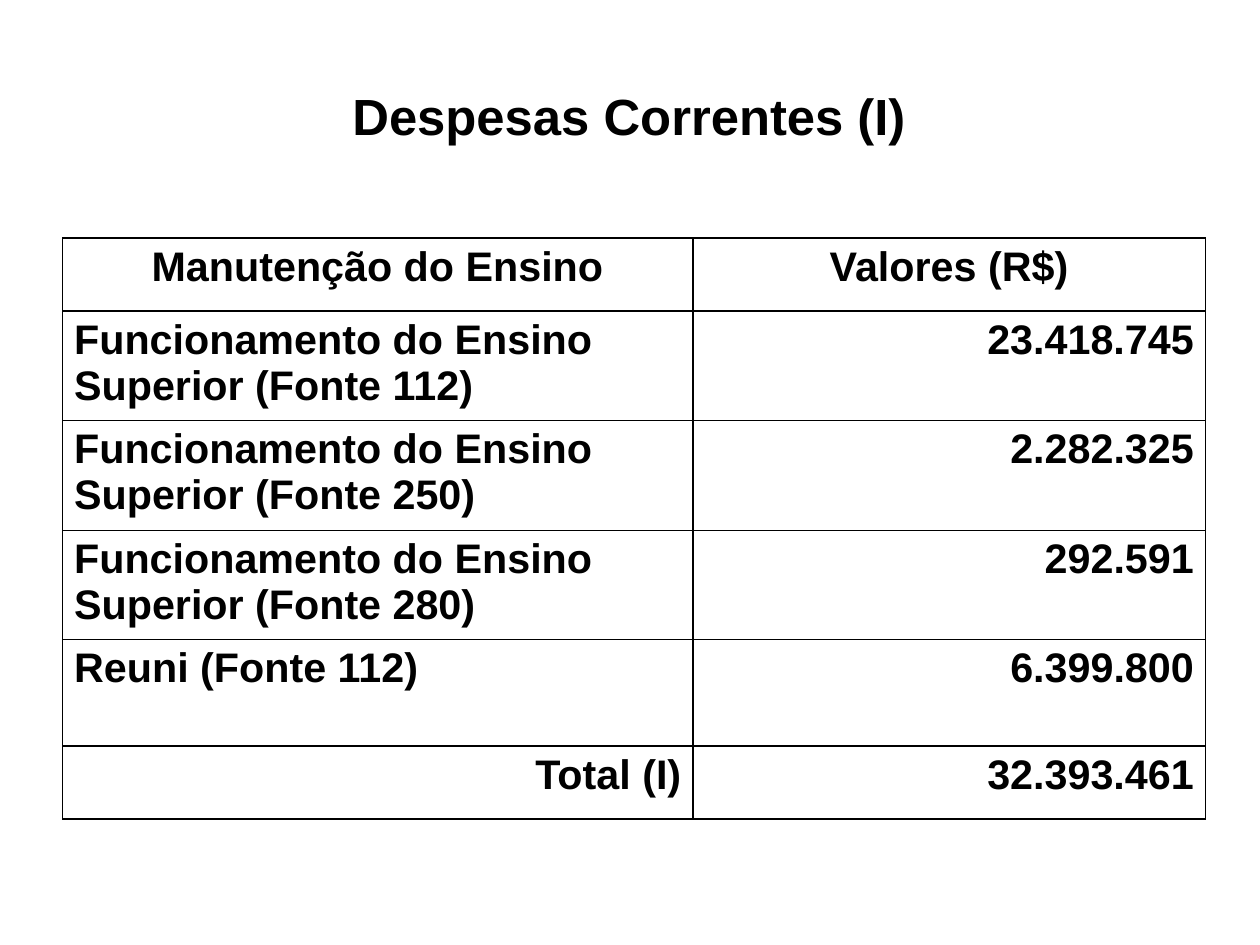
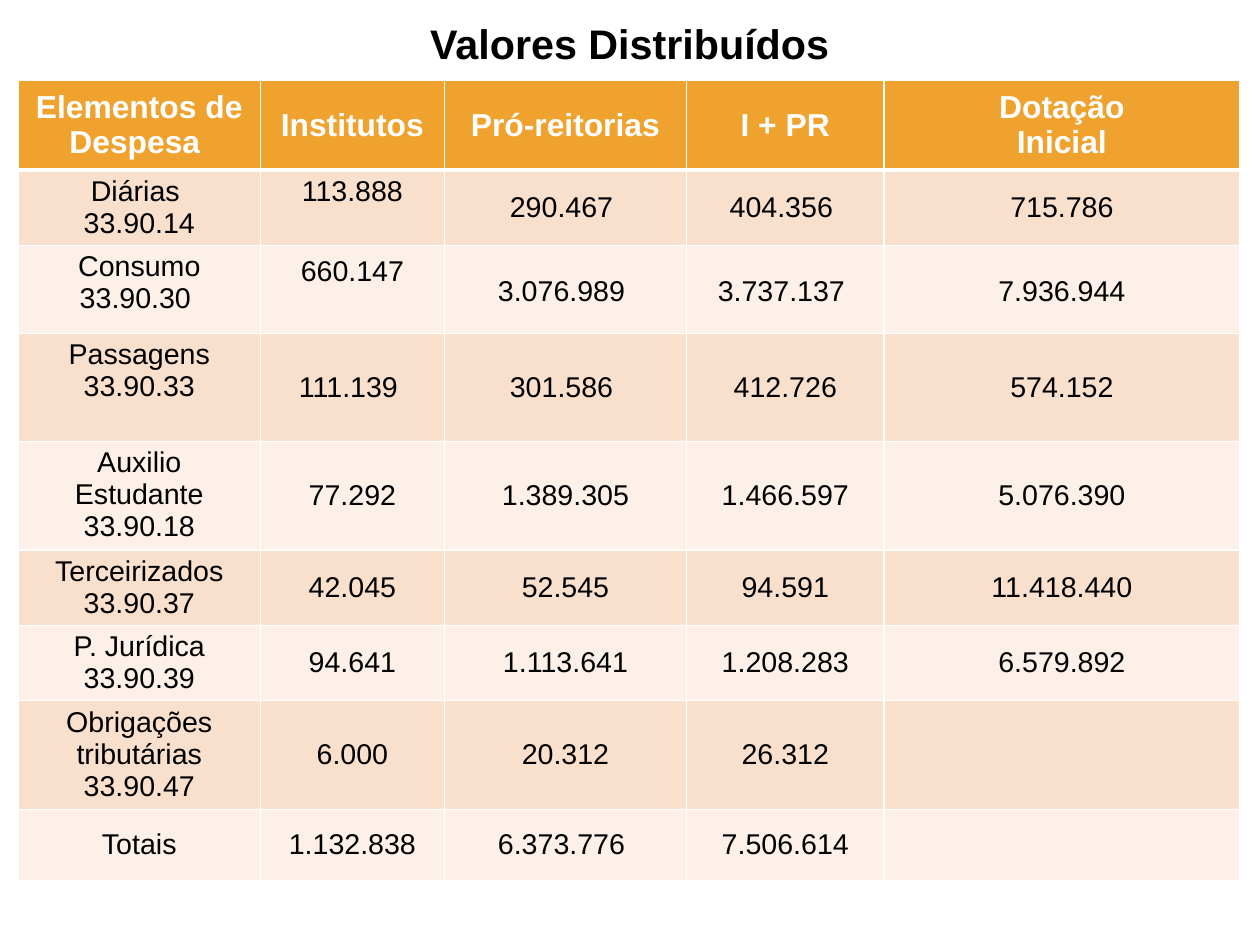
"""Build two budget slides, each with a title and a table."""
from collections.abc import Callable
from dataclasses import dataclass, replace

from lxml import etree
from pptx import Presentation
from pptx.dml.color import RGBColor
from pptx.enum.text import MSO_ANCHOR, PP_ALIGN
from pptx.oxml.ns import qn
from pptx.slide import Slide
from pptx.table import _Cell
from pptx.util import Pt

LEFT, CENTER, RIGHT = PP_ALIGN.LEFT, PP_ALIGN.CENTER, PP_ALIGN.RIGHT
TOP, MIDDLE = MSO_ANCHOR.TOP, MSO_ANCHOR.MIDDLE
FONT = "Arial"
BLACK, WHITE = "000000", "FFFFFF"
ORANGE, PEACH, CREAM = "F0A22E", "F9E0CD", "FCF0E8"
SLIDE_W, SLIDE_H = 793.75, 595.25
BLANK_LAYOUT = 6


@dataclass(frozen=True)
class Title:
    """A slide title with its box and size."""
    text: str
    left: float
    top: float
    width: float
    height: float
    size: float


@dataclass(frozen=True)
class CellStyle:
    """The look of one table cell."""
    size: float
    bold: bool = False
    color: str = BLACK
    fill: str | None = None
    border: str = BLACK
    bottom: float = 1
    align: PP_ALIGN = CENTER
    anchor: MSO_ANCHOR = TOP
    spacing: float | None = None
    after: float | None = None


@dataclass(frozen=True)
class Grid:
    """A table's place, column widths, row heights and wording."""
    left: float
    top: float
    cols: list[float]
    rows: list[float]
    texts: list[list[str]]


EXPENSES_TITLE = Title("Despesas Correntes (I)", 39.5, 23, 714, 99, 32)
EXPENSES = Grid(
    39.5, 150, [397, 323], [46, 69, 69, 69, 67, 46],
    [
        ["Manutenção do Ensino", "Valores (R$)"],
        ["Funcionamento do Ensino Superior (Fonte 112)", "23.418.745"],
        ["Funcionamento do Ensino Superior (Fonte 250)", "2.282.325"],
        ["Funcionamento do Ensino Superior (Fonte 280)", "292.591"],
        ["Reuni (Fonte 112)", "6.399.800"],
        ["Total (I)", "32.393.461"],
    ],
)

VALUES_TITLE = Title("Valores Distribuídos", 0, 0, SLIDE_W, 54, 26)
VALUES = Grid(
    11.5, 50.5, [152.5, 116, 152.5, 124.5, 224],
    [56.5, 47.5, 55.5, 68, 67.5, 47.5, 47.5, 67.5, 45],
    [
        ["Elementos de Despesa ", "Institutos", "Pró-reitorias", "I + PR", "Dotação\nInicial"],
        ["Diárias \n33.90.14", "113.888", "290.467 ", "404.356 ", "715.786"],
        ["Consumo\n33.90.30 ", "660.147", "3.076.989 ", "3.737.137 ", "7.936.944"],
        ["Passagens 33.90.33", "111.139 ", "301.586 ", "412.726", "574.152"],
        ["Auxilio Estudante\n33.90.18", "77.292", "1.389.305", "1.466.597", "5.076.390"],
        ["Terceirizados 33.90.37", "42.045", "52.545", "94.591", "11.418.440"],
        ["P. Jurídica 33.90.39", "94.641", "1.113.641", "1.208.283", "6.579.892"],
        ["Obrigações tributárias\n33.90.47", "6.000", "20.312", "26.312", ""],
        ["Totais", "1.132.838", "6.373.776 ", "7.506.614", ""],
    ],
)
CONSUMPTION_ROW = 2


def rgb(color: str) -> RGBColor:
    """Turn a hex string into a colour."""
    return RGBColor.from_string(color)


def add_title(s: Slide, title: Title) -> None:
    """Draw a bold centred title."""
    box = s.shapes.add_textbox(Pt(title.left), Pt(title.top), Pt(title.width), Pt(title.height))
    tf = box.text_frame
    tf.word_wrap = True
    tf.vertical_anchor = MIDDLE
    tf.margin_left = tf.margin_right = tf.margin_top = tf.margin_bottom = 0
    p = tf.paragraphs[0]
    p.text = title.text
    p.alignment = CENTER
    p.font.name, p.font.size, p.font.bold = FONT, Pt(title.size), True
    p.font.color.rgb = rgb(BLACK)


def add_borders(cell: _Cell, color: str, bottom: float) -> None:
    """Rule all four sides of a cell."""
    props = cell._tc.get_or_add_tcPr()
    for side, width in (("L", 1), ("R", 1), ("T", 1), ("B", bottom)):
        line = etree.SubElement(props, qn(f"a:ln{side}"), w=str(Pt(width)))
        fill = etree.SubElement(line, qn("a:solidFill"))
        etree.SubElement(fill, qn("a:srgbClr"), val=color)


def fill_cell(cell: _Cell, text: str, style: CellStyle) -> None:
    """Write and style one cell."""
    add_borders(cell, style.border, style.bottom)
    if style.fill:
        cell.fill.solid()
        cell.fill.fore_color.rgb = rgb(style.fill)
    else:
        cell.fill.background()
    cell.vertical_anchor = style.anchor
    if style.anchor == TOP:
        cell.margin_bottom = 0
    cell.text_frame.text = text
    for p in cell.text_frame.paragraphs:
        p.alignment = style.align
        if style.spacing:
            p.line_spacing = style.spacing
        if style.after:
            p.space_after = Pt(style.after)
        p.font.name, p.font.size, p.font.bold = FONT, Pt(style.size), style.bold
        p.font.color.rgb = rgb(style.color)


def add_grid(s: Slide, grid: Grid, style_of: Callable[[int, int], CellStyle]) -> None:
    """Draw a table, asking for the style of each cell."""
    frame = s.shapes.add_table(
        len(grid.rows), len(grid.cols), Pt(grid.left), Pt(grid.top),
        Pt(sum(grid.cols)), Pt(sum(grid.rows)))
    table = frame.table
    table.first_row = table.horz_banding = False
    for column, width in zip(table.columns, grid.cols):
        column.width = Pt(width)
    for row, height in zip(table.rows, grid.rows):
        row.height = Pt(height)
    for i, texts in enumerate(grid.texts):
        for j, text in enumerate(texts):
            fill_cell(table.cell(i, j), text, style_of(i, j))


def expenses_style(i: int, j: int) -> CellStyle:
    """Centre the header, set labels left, and amounts and the total right."""
    last = len(EXPENSES.rows) - 1
    if i == 0:
        align = CENTER
    else:
        align = RIGHT if j > 0 or i == last else LEFT
    return CellStyle(26, bold=True, align=align)


def values_style(i: int, j: int) -> CellStyle:
    """Give an orange header over rows banded in two tints."""
    if i == 0:
        return CellStyle(20, True, WHITE, ORANGE, WHITE, bottom=3, anchor=MIDDLE)
    last = len(VALUES.rows) - 1
    at_top = (j == 0 and i < last) or (j == 1 and i <= CONSUMPTION_ROW)
    style = CellStyle(18, fill=PEACH if i % 2 else CREAM, border=WHITE,
                      anchor=TOP if at_top else MIDDLE)
    if i == CONSUMPTION_ROW and j > 0:
        style = replace(style, spacing=1.15, after=10)
    return style


def main() -> None:
    """Build and save the presentation."""
    prs = Presentation()
    prs.slide_width, prs.slide_height = Pt(SLIDE_W), Pt(SLIDE_H)
    for title, grid, style_of in (
        (EXPENSES_TITLE, EXPENSES, expenses_style),
        (VALUES_TITLE, VALUES, values_style),
    ):
        s = prs.slides.add_slide(prs.slide_layouts[BLANK_LAYOUT])
        add_title(s, title)
        add_grid(s, grid, style_of)
    prs.save("out.pptx")


if __name__ == "__main__":
    main()
